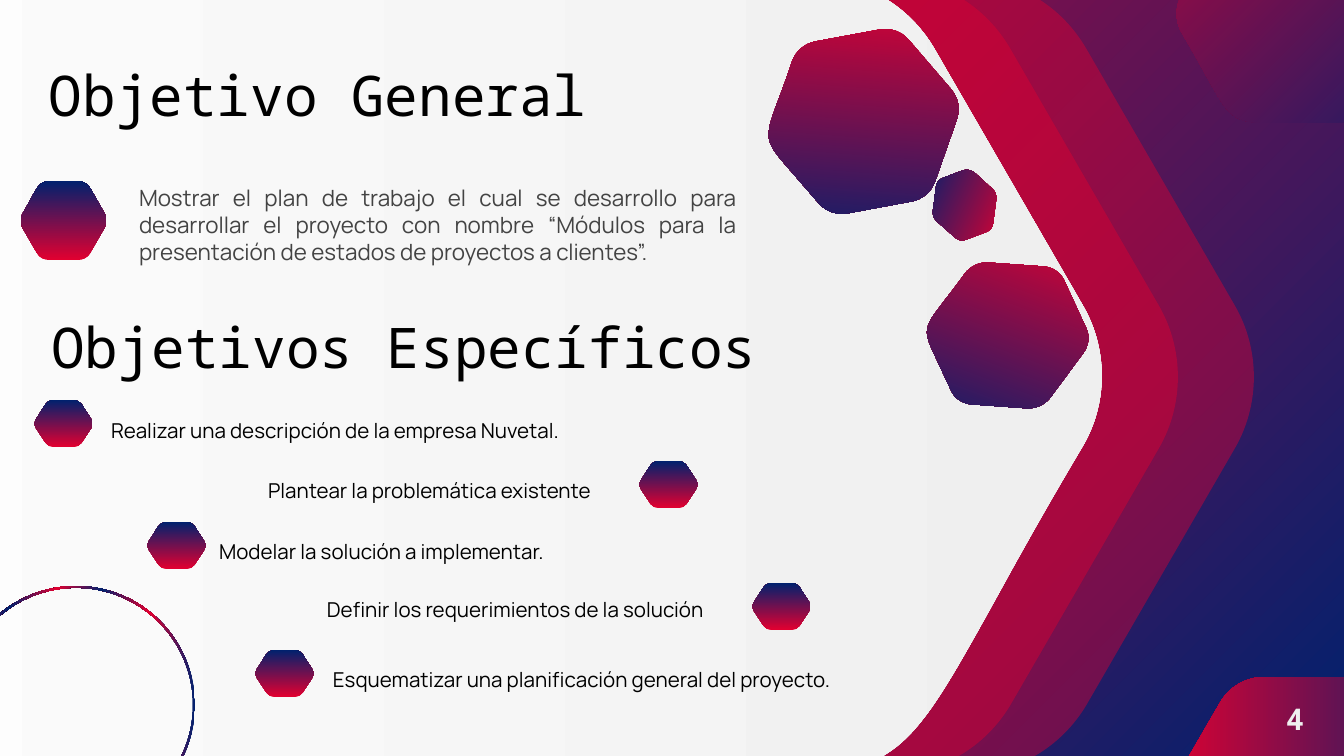
from dataclasses import dataclass

from lxml import etree
from pptx import Presentation
from pptx.dml.color import RGBColor
from pptx.enum.shapes import MSO_SHAPE
from pptx.enum.text import MSO_ANCHOR, MSO_AUTO_SIZE, PP_ALIGN
from pptx.oxml.ns import qn
from pptx.util import Pt

DONUT = MSO_SHAPE.DONUT
TOP, MIDDLE, BOTTOM = MSO_ANCHOR.TOP, MSO_ANCHOR.MIDDLE, MSO_ANCHOR.BOTTOM
LEFT, CENTER, JUSTIFY = PP_ALIGN.LEFT, PP_ALIGN.CENTER, PP_ALIGN.JUSTIFY
EMU_PER_PX = 914400 / 134.4
INSET = 13
BLOB_W, BLOB_H = 661, 594
BLOB_START = (220, 0)
POINTED_SIDE = [
    [(183, 0), (148, 20), (129, 53)], [(18, 245)],
    [(0, 277), (0, 317), (19, 349)], [(47, 396), (68, 434), (85, 465)],
    [(149, 580), (157, 594), (260, 594)],
]
FAR_SIDE = [
    [(442, 593)], [(479, 593), (513, 573), (532, 541)], [(643, 349)],
    [(661, 317), (661, 277), (643, 245)], [(532, 53)],
    [(513, 20), (479, 0), (442, 0)],
]


@dataclass(frozen=True)
class Theme:
    red: str = "E20030"
    blue: str = "00216E"
    white: str = "FFFFFF"
    pale: str = "EFEFEF"
    black: str = "000000"
    gray: str = "434343"
    mono: str = "Noto Sans Mono"
    sans: str = "Manrope"
    title_pt: int = 30
    body_pt: int = 12
    item_pt: int = 11
    number_pt: int = 16


T = Theme()


@dataclass(frozen=True)
class Box:
    x: int
    y: int
    w: int
    h: int


@dataclass(frozen=True)
class Gradient:
    stops: tuple
    angle: int = 0
    alpha: int = 100


@dataclass(frozen=True)
class Blob:
    box: Box
    fill: Gradient
    rotation: float = 0
    mirrored: bool = False


@dataclass(frozen=True)
class TextStyle:
    size: int
    font: str
    color: str
    bold: bool = False
    align: PP_ALIGN = LEFT
    anchor: MSO_ANCHOR = TOP
    spacing: float = 1.0


@dataclass(frozen=True)
class Objective:
    text: str
    box: Box
    bullet: tuple


RED_BLUE = ((0, T.red), (100, T.blue))
VEIL = Gradient(((0, T.red), (100, T.red)), 0, 41)
DIAGONAL = Gradient(RED_BLUE, 45)
VERTICAL = Gradient(RED_BLUE, 90)
RING = Gradient(((0, T.blue), (19, T.red), (39, T.blue),
                 (58, T.red), (78, T.blue), (100, T.red)), 180)
TITLE = TextStyle(T.title_pt, T.mono, T.black, anchor=BOTTOM)
BODY = TextStyle(T.body_pt, T.sans, T.gray, align=JUSTIFY)
ITEM = TextStyle(T.item_pt, T.sans, T.black, spacing=1.15)
NUMBER = TextStyle(T.number_pt, T.mono, T.pale, True, CENTER, MIDDLE)

PANEL = Box(220, -22, 888, 798)
PANEL_LEFT = -340
BACK_BLOBS = [
    Blob(Box(372, -22, 888, 798), VEIL),
    Blob(Box(296, -22, 888, 798), VEIL),
    Blob(Box(1157, 677, 323, 289), Gradient(RED_BLUE)),
]
FRONT_BLOBS = [
    Blob(Box(1175, -95, 243, 218), Gradient(RED_BLUE, 45, 41)),
    Blob(Box(766, 34, 195, 175), DIAGONAL, 49.4),
    Blob(Box(929, 261, 157, 149), DIAGONAL, 65.3),
    Blob(Box(931, 172, 67, 66), DIAGONAL, 159.6),
    Blob(Box(20, 181, 87, 79), VERTICAL, 180, True),
]
OBJECTIVES = [
    Objective("Realizar una descripción de la empresa Nuvetal.",
              Box(98, 401, 562, 47), (34, 400)),
    Objective("Plantear la problemática existente",
              Box(255, 461, 382, 47), (639, 461)),
    Objective("Modelar la solución a implementar.",
              Box(206, 522, 390, 47), (147, 522)),
    Objective("Definir los requerimientos de la solución",
              Box(314, 580, 441, 47), (752, 583)),
    Objective("Esquematizar una planificación general del proyecto.",
              Box(320, 650, 594, 47), (255, 650)),
]


def px(n: float) -> int:
    return round(n * EMU_PER_PX)


def paint(fill, gradient: Gradient) -> None:
    fill.gradient()
    fill.gradient_angle = (360 - gradient.angle) % 360
    gs_lst = fill._fill._gradFill.find(qn("a:gsLst"))
    for gs in list(gs_lst):
        gs_lst.remove(gs)
    for pos, color in gradient.stops:
        gs = etree.SubElement(gs_lst, qn("a:gs"), pos=str(pos * 1000))
        clr = etree.SubElement(gs, qn("a:srgbClr"), val=color)
        if gradient.alpha < 100:
            etree.SubElement(clr, qn("a:alpha"), val=str(gradient.alpha * 1000))


def finish(sp, gradient: Gradient) -> None:
    sp.shadow.inherit = False
    sp.line.fill.background()
    paint(sp.fill, gradient)


def fit(point: tuple, box: Box, mirrored: bool) -> tuple:
    x, y = point
    x = BLOB_W - x if mirrored else x
    return box.x + x * box.w / BLOB_W, box.y + y * box.h / BLOB_H


def bend(sp, segments: list) -> None:
    lines = iter(sp._element.findall(".//" + qn("a:lnTo")))
    for seg in segments:
        first, *others = [next(lines) for _ in seg]
        if others:
            curve = etree.Element(qn("a:cubicBezTo"))
            first.addprevious(curve)
            for line in (first, *others):
                curve.append(line[0])
                line.getparent().remove(line)


def add_outline(s, start: tuple, segments: list, gradient: Gradient):
    points = [(px(x), px(y)) for seg in segments for x, y in seg]
    builder = s.shapes.build_freeform(px(start[0]), px(start[1]), scale=1.0)
    builder.add_line_segments(points, close=True)
    sp = builder.convert_to_shape()
    bend(sp, segments)
    finish(sp, gradient)
    return sp


def add_blob(s, blob: Blob) -> None:
    start, segments = trace(POINTED_SIDE + FAR_SIDE, blob.box, blob.mirrored)
    add_outline(s, start, segments, blob.fill).rotation = blob.rotation


def trace(segments: list, box: Box, mirrored: bool) -> tuple:
    return (fit(BLOB_START, box, mirrored),
            [[fit(point, box, mirrored) for point in seg] for seg in segments])


def place_text(sp, box: Box, text: str, style: TextStyle) -> None:
    sp.left, sp.top, sp.width, sp.height = map(px, (box.x, box.y, box.w, box.h))
    tf = sp.text_frame
    tf.word_wrap, tf.auto_size = True, MSO_AUTO_SIZE.NONE
    tf.vertical_anchor = style.anchor
    tf.margin_left = tf.margin_right = tf.margin_top = tf.margin_bottom = px(INSET)
    p = tf.paragraphs[0]
    p.alignment, p.line_spacing = style.align, style.spacing
    r = p.add_run()
    r.text = text
    r.font.size, r.font.name, r.font.bold = Pt(style.size), style.font, style.bold
    r.font.color.rgb = RGBColor.from_string(style.color)


def add_text(s, box: Box, text: str, style: TextStyle) -> None:
    place_text(s.shapes.add_textbox(0, 0, 0, 0), box, text, style)


def main() -> None:
    prs = Presentation()
    prs.slide_width, prs.slide_height = px(1344), px(756)
    s = prs.slides.add_slide(prs.slide_layouts[5])
    paint(s.background.fill, DIAGONAL)

    for blob in BACK_BLOBS:
        add_blob(s, blob)
    start, edge = trace(POINTED_SIDE, PANEL, True)
    corners = [[(PANEL_LEFT, PANEL.y + PANEL.h)], [(PANEL_LEFT, PANEL.y)]]
    add_outline(s, start, edge + corners, Gradient(((0, T.white), (100, T.pale))))
    ring = s.shapes.add_shape(DONUT, px(-43), px(586), px(238), px(238))
    ring.adjustments[0] = 0.008
    finish(ring, RING)
    for blob in FRONT_BLOBS:
        add_blob(s, blob)

    title = s.shapes.title
    s.shapes._spTree.append(title._element)
    place_text(title, Box(36, 62, 698, 79), "Objetivo General", TITLE)
    add_text(s, Box(126, 171, 624, 102),
             "Mostrar el plan de trabajo el cual se desarrollo para desarrollar el "
             "proyecto con nombre “Módulos para la presentación de estados de "
             "proyectos a clientes”.", BODY)
    add_text(s, Box(1246, 677, 98, 83), "4", NUMBER)
    add_text(s, Box(38, 314, 735, 79), "Objetivos Específicos", TITLE)
    for item in OBJECTIVES:
        add_blob(s, Blob(Box(*item.bullet, 59, 47), VERTICAL, 180, True))
        add_text(s, item.box, item.text, ITEM)
    prs.save("out.pptx")


if __name__ == "__main__":
    main()
